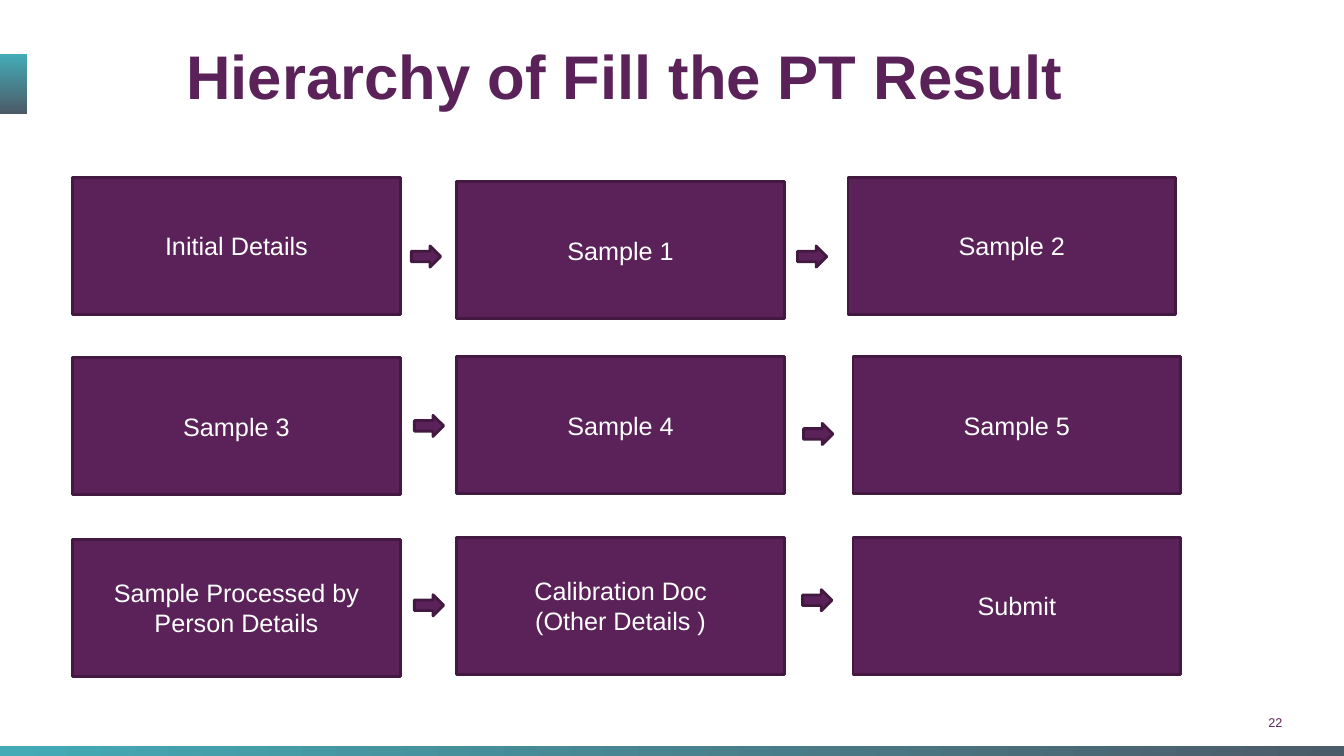
from pptx import Presentation
from pptx.dml.color import RGBColor
from pptx.enum.shapes import MSO_SHAPE
from pptx.enum.text import MSO_ANCHOR, PP_ALIGN
from pptx.util import Inches, Pt

WIDTH, HEIGHT = 13.33, 7.5
PURPLE, EDGE, WHITE = "5A2259", "431942", "FFFFFF"
TEAL, SLATE = "43ABB6", "4C5B68"

# Grid of steps, and the arrows between its columns
COLUMNS = (0.72, 4.53, 8.46)
FIRST_ROW, ROW_PITCH = 1.76, 1.79
STEP_WIDTH, STEP_HEIGHT = 3.25, 1.36
ARROW_WIDTH, ARROW_HEIGHT = 0.29, 0.21

STEPS = (
    ("Initial Details", "Sample 1", "Sample 2"),
    ("Sample 3", "Sample 4", "Sample 5"),
    ("Sample Processed by Person Details",
     "Calibration Doc\n(Other Details )", "Submit"),
)
# Shifts of single steps from the grid, by row and column
SHIFTS = {(0, 1): (0, 0.04), (0, 2): (-0.05, 0), (1, 1): (0, -0.01),
          (1, 2): (0, -0.01), (2, 0): (0, 0.01), (2, 1): (0, -0.01),
          (2, 2): (0, -0.01)}
# Left and top of the two arrows in each row
ARROWS = (
    ((4.08, 2.44), (7.91, 2.44)),
    ((4.11, 4.12), (7.97, 4.2)),
    ((4.11, 5.9), (7.96, 5.85)),
)


def color(value):
    return RGBColor.from_string(value)


def write(frame, text, size, shade, align, bold=False):
    for index, line in enumerate(text.split("\n")):
        para = frame.add_paragraph() if index else frame.paragraphs[0]
        para.alignment = align
        span = para.add_run()
        span.text = line
        span.font.name = "Arial"
        span.font.size = Pt(size)
        span.font.bold = bold
        span.font.color.rgb = color(shade)


def add_text(page, area, text, size, align, bold=False, inset=True):
    box = page.shapes.add_textbox(*map(Inches, area))
    frame = box.text_frame
    frame.word_wrap = inset
    if not inset:
        frame.margin_left = frame.margin_right = 0
        frame.margin_top = frame.margin_bottom = 0
    write(frame, text, size, PURPLE, align, bold)


def add_gradient_bar(page, area, angle):
    bar = page.shapes.add_shape(MSO_SHAPE.RECTANGLE, *map(Inches, area))
    bar.shadow.inherit = False
    bar.line.fill.background()
    bar.fill.gradient()
    bar.fill.gradient_angle = angle
    for stop, shade in zip(bar.fill.gradient_stops, (TEAL, SLATE)):
        stop.color.rgb = color(shade)


def add_purple_shape(page, kind, area):
    shape = page.shapes.add_shape(kind, *map(Inches, area))
    shape.shadow.inherit = False
    shape.fill.solid()
    shape.fill.fore_color.rgb = color(PURPLE)
    shape.line.color.rgb = color(EDGE)
    shape.line.width = Pt(2)
    return shape


def add_step(page, row, column, text):
    shift_x, shift_y = SHIFTS.get((row, column), (0, 0))
    area = (COLUMNS[column] + shift_x, FIRST_ROW + row * ROW_PITCH + shift_y,
            STEP_WIDTH, STEP_HEIGHT)
    step = add_purple_shape(page, MSO_SHAPE.FLOWCHART_PROCESS, area)
    step.text_frame.word_wrap = True
    step.text_frame.vertical_anchor = MSO_ANCHOR.MIDDLE
    write(step.text_frame, text, 18, WHITE, PP_ALIGN.CENTER)


def main():
    deck = Presentation()
    deck.slide_width, deck.slide_height = Inches(WIDTH), Inches(HEIGHT)
    page = deck.slides.add_slide(deck.slide_layouts[6])

    # Page number and accent bars
    add_text(page, (12.46, 7.09, 0.26, 0.15), "22", 9, PP_ALIGN.RIGHT,
             inset=False)
    add_gradient_bar(page, (0, 0.54, 0.27, 0.59), 270)
    add_gradient_bar(page, (0, HEIGHT - 0.1, WIDTH, 0.1), 0)

    # Title
    add_text(page, (1.75, 0.33, 9.39, 0.84), "Hierarchy of Fill the PT Result",
             44, PP_ALIGN.LEFT, bold=True)

    # Steps
    for row, texts in enumerate(STEPS):
        for column, text in enumerate(texts):
            add_step(page, row, column, text)

    # Arrows
    for pair in ARROWS:
        for left, top in pair:
            add_purple_shape(page, MSO_SHAPE.RIGHT_ARROW,
                             (left, top, ARROW_WIDTH, ARROW_HEIGHT))

    deck.save("out.pptx")


if __name__ == "__main__":
    main()
